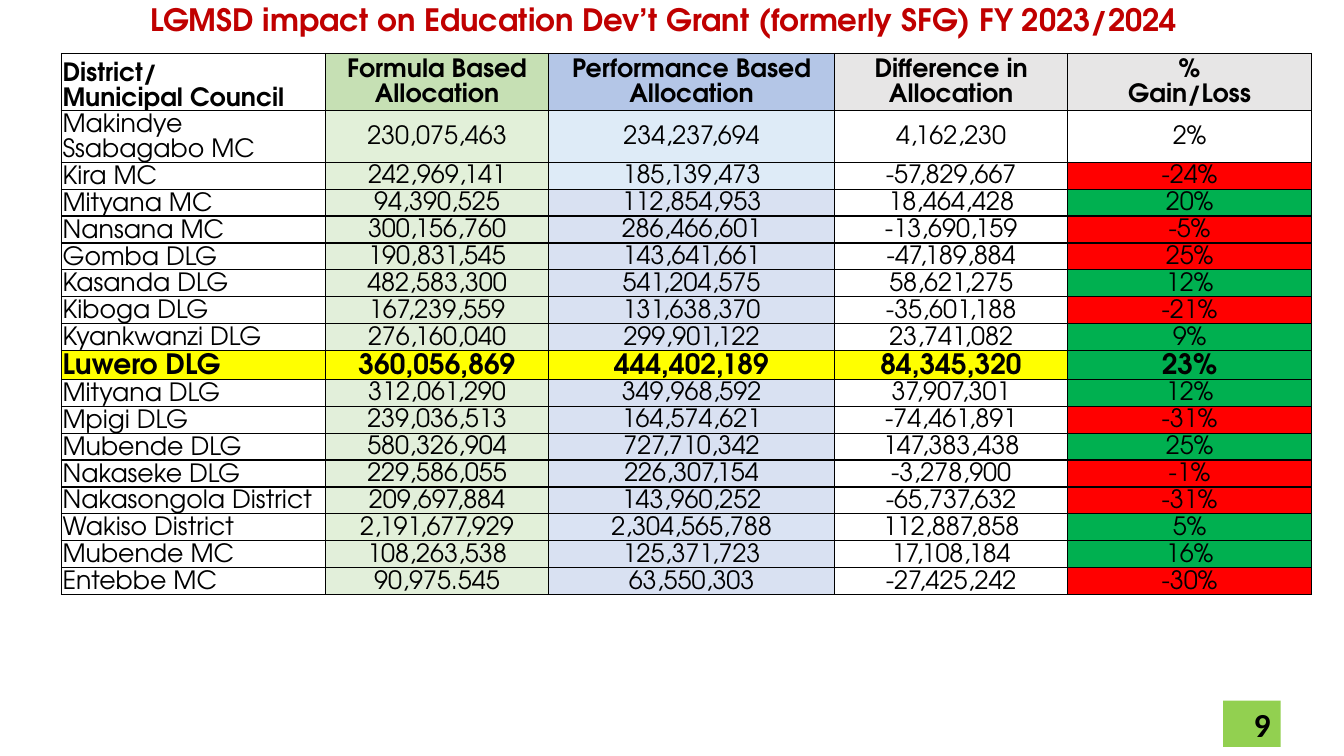
from dataclasses import dataclass

from lxml.etree import SubElement
from pptx import Presentation
from pptx.dml.color import RGBColor
from pptx.enum.shapes import MSO_SHAPE
from pptx.enum.text import MSO_ANCHOR, MSO_AUTO_SIZE, PP_ALIGN
from pptx.oxml.ns import qn
from pptx.util import Inches, Pt


@dataclass(frozen=True)
class Theme:
    font: str = "TeX Gyre Adventor"
    number_font: str = "Calibri"
    title_size: int = 22
    table_size: int = 18
    highlight_size: int = 20
    number_size: int = 24
    black: str = "000000"
    title: str = "C00000"
    number_fill: str = "92D050"
    header_formula: str = "C6E0B4"
    header_performance: str = "B4C6E7"
    header_plain: str = "E7E6E6"
    formula: str = "E2EFDA"
    formula_soft: str = "E2F0D9"
    performance: str = "D9E1F2"
    performance_soft: str = "DEEBF7"
    performance_wakiso: str = "DAE3F3"
    highlight: str = "FFFF00"
    gain: str = "00B050"
    loss: str = "FF0000"


THEME = Theme()
WIDTH = Inches(13.33)
HEIGHT = Inches(7.5)
COLUMN_SHARES = (19.65, 16.58, 21.3, 17.33, 18.15)
HEADER_SHARE, FIRST_SHARE, ROW_SHARE = 7.6, 6.8, 3.56
HIGHLIGHTED = "Luwero DLG"

HEADER = (
    "District/\nMunicipal Council",
    "Formula Based Allocation",
    "Performance Based Allocation",
    "Difference in Allocation",
    "%\nGain/Loss",
)
ALLOCATIONS = (
    ("Makindye Ssabagabo MC", "230,075,463", "234,237,694", "4,162,230", "2%"),
    ("Kira MC", "242,969,141", "185,139,473", "-57,829,667", "-24%"),
    ("Mityana MC", "94,390,525", "112,854,953", "18,464,428", "20%"),
    ("Nansana MC", "300,156,760", "286,466,601", "-13,690,159", "-5%"),
    ("Gomba DLG", "190,831,545", "143,641,661", "-47,189,884", "25%"),
    ("Kasanda DLG", "482,583,300", "541,204,575", "58,621,275", "12%"),
    ("Kiboga DLG", "167,239,559", "131,638,370", "-35,601,188", "-21%"),
    ("Kyankwanzi DLG", "276,160,040", "299,901,122", "23,741,082", "9%"),
    ("Luwero DLG", "360,056,869", "444,402,189", "84,345,320", "23%"),
    ("Mityana DLG", "312,061,290", "349,968,592", "37,907,301", "12%"),
    ("Mpigi DLG", "239,036,513", "164,574,621", "-74,461,891", "-31%"),
    ("Mubende DLG", "580,326,904", "727,710,342", "147,383,438", "25%"),
    ("Nakaseke DLG", "229,586,055", "226,307,154", "-3,278,900", "-1%"),
    ("Nakasongola District", "209,697,884", "143,960,252", "-65,737,632", "-31%"),
    ("Wakiso District", "2,191,677,929", "2,304,565,788", "112,887,858", "5%"),
    ("Mubende MC", "108,263,538", "125,371,723", "17,108,184", "16%"),
    ("Entebbe MC", "90,975.545", "63,550,303", "-27,425,242", "-30%"),
)


def across(share):
    return round(WIDTH * share / 100)


def down(share):
    return round(HEIGHT * share / 100)


def write(frame, text, font, size, color, bold, align, spacing=1.0):
    frame.text = text
    for para in frame.paragraphs:
        para.alignment = align
        para.line_spacing = spacing
        para.font.name = font
        para.font.size = Pt(size)
        para.font.bold = bold
        para.font.color.rgb = RGBColor.from_string(color)


def add_title(page, text):
    title = page.shapes.title
    title.left, title.top = across(10.43), 0
    title.width, title.height = across(87.7), down(5.6)
    frame = title.text_frame
    frame.word_wrap = True
    frame.auto_size = MSO_AUTO_SIZE.NONE
    frame.vertical_anchor = MSO_ANCHOR.MIDDLE
    write(frame, text, THEME.font, THEME.title_size, THEME.title, True, PP_ALIGN.LEFT, 0.9)


def add_page_number(page, text):
    box = page.shapes.add_shape(
        MSO_SHAPE.RECTANGLE, across(91), down(92.67), across(4.28), down(6.13)
    )
    box.shadow.inherit = False
    box.fill.solid()
    box.fill.fore_color.rgb = RGBColor.from_string(THEME.number_fill)
    box.line.fill.background()
    box.text_frame.vertical_anchor = MSO_ANCHOR.MIDDLE
    write(box.text_frame, text, THEME.number_font, THEME.number_size,
          THEME.black, True, PP_ALIGN.RIGHT)


def add_borders(cell):
    properties = cell._tc.get_or_add_tcPr()
    for position, side in enumerate(("a:lnL", "a:lnR", "a:lnT", "a:lnB")):
        line = SubElement(properties, qn(side), w=str(Pt(1)))
        fill = SubElement(line, qn("a:solidFill"))
        SubElement(fill, qn("a:srgbClr"), val=THEME.black)
        properties.insert(position, line)


def row_fills(index, record):
    district, difference = record[0], record[3]
    change = THEME.loss if difference.startswith("-") else THEME.gain
    if district == HIGHLIGHTED:
        return (THEME.highlight,) * 4 + (change,)
    if index < 2:
        change = change if index else None
        return None, THEME.formula_soft, THEME.performance_soft, None, change
    if district == "Wakiso District":
        return None, THEME.formula_soft, THEME.performance_wakiso, None, change
    return None, THEME.formula, THEME.performance, None, change


def fill_row(row, texts, fills, size, bold):
    for column, (cell, text, color) in enumerate(zip(row.cells, texts, fills)):
        cell.margin_left = cell.margin_top = cell.margin_right = Inches(0.01)
        cell.margin_bottom = 0
        cell.vertical_anchor = MSO_ANCHOR.MIDDLE if column else MSO_ANCHOR.BOTTOM
        align = PP_ALIGN.CENTER if column else PP_ALIGN.LEFT
        write(cell.text_frame, text, THEME.font, size, THEME.black, bold, align, 1.07)
        if color:
            cell.fill.solid()
            cell.fill.fore_color.rgb = RGBColor.from_string(color)
        else:
            cell.fill.background()
        add_borders(cell)


def add_allocation_table(page):
    row_shares = [HEADER_SHARE, FIRST_SHARE] + [ROW_SHARE] * (len(ALLOCATIONS) - 1)
    table = page.shapes.add_table(
        len(row_shares), len(COLUMN_SHARES), across(4.58), down(7.07),
        across(sum(COLUMN_SHARES)), down(sum(row_shares)),
    ).table
    table.first_row = table.horz_banding = False
    for column, share in zip(table.columns, COLUMN_SHARES):
        column.width = across(share)
    for row, share in zip(table.rows, row_shares):
        row.height = down(share)
    rows = list(table.rows)
    header_fills = (None, THEME.header_formula, THEME.header_performance,
                    THEME.header_plain, THEME.header_plain)
    fill_row(rows[0], HEADER, header_fills, THEME.table_size, True)
    for index, record in enumerate(ALLOCATIONS):
        bold = record[0] == HIGHLIGHTED
        size = THEME.highlight_size if bold else THEME.table_size
        fill_row(rows[index + 1], record, row_fills(index, record), size, bold)


def main():
    deck = Presentation()
    deck.slide_width, deck.slide_height = WIDTH, HEIGHT
    page = deck.slides.add_slide(deck.slide_layouts[5])
    add_title(page, "LGMSD impact on Education Dev’t Grant (formerly SFG) FY 2023/2024")
    add_page_number(page, "9")
    add_allocation_table(page)
    deck.save("out.pptx")


if __name__ == "__main__":
    main()
